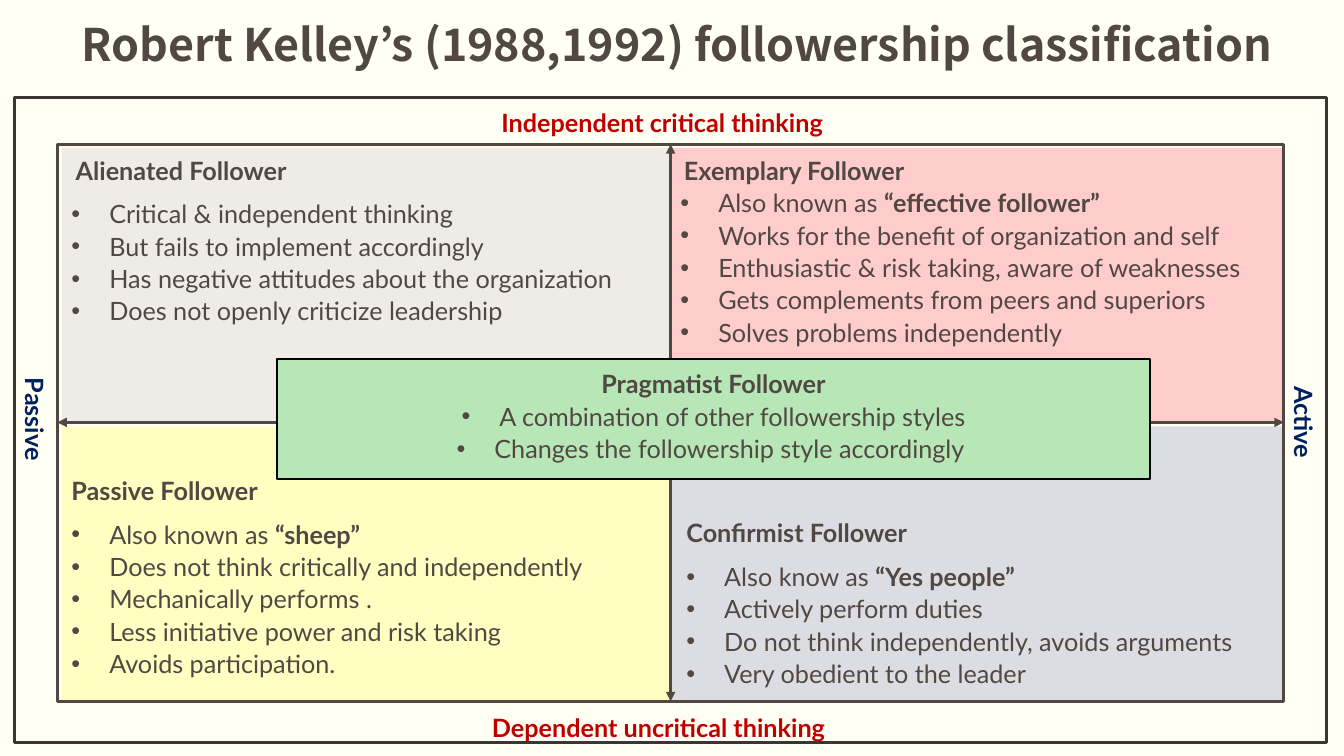
from pptx import Presentation
from pptx.dml.color import RGBColor
from pptx.enum.shapes import MSO_CONNECTOR, MSO_SHAPE
from pptx.enum.text import MSO_ANCHOR, PP_ALIGN
from pptx.oxml.ns import qn
from pptx.util import Pt
from lxml.etree import SubElement

# Content
TITLE = "Robert Kelley’s (1988,1992) followership classification"
TOP, BOTTOM = "Independent critical thinking", "Dependent uncritical thinking"
SIDES = [("Passive", 26, 299.5), ("Active", 932.4, 301.7)]  # word, centre
QUADS = [  # heading, points, fill, column, row, text top, format
    ("Alienated Follower", [
        "Critical & independent thinking",
        "But fails to implement accordingly",
        "Has negative attitudes about the organization",
        "Does not openly criticize leadership",
    ], "stone", 0, 0, 105.7, {"shift": 3}),
    ("Exemplary Follower", [
        "Also known as “effective follower”",
        "Works for the benefit of organization and self",
        "Enthusiastic & risk taking, aware of weaknesses",
        "Gets complements from peers and superiors",
        "Solves problems independently",
    ], "pink", 1, 0, 105.9, {"shift": 2.5, "gap": 0}),
    ("Passive Follower", [
        "Also known as “sheep”",
        "Does not think critically and independently",
        "Mechanically performs .",
        "Less initiative power and risk taking",
        "Avoids participation.",
    ], "yellow", 0, 1, 334.4, {}),
    ("Confirmist Follower", [
        "Also know as “Yes people”",
        "Actively perform duties",
        "Do not think independently, avoids arguments",
        "Very obedient to the leader",
    ], "grey", 1, 1, 364.7, {"left": 11.3}),
]
CENTRE = ("Pragmatist Follower", [
    "A combination of other followership styles",
    "Changes the followership style accordingly ",
])
HEX = {"page": "FFFFF3", "frame": "3C3532", "ink": "514843", "red": "C00000",
       "navy": "002060", "stone": "EFEBE5", "pink": "FFCCCC", "yellow": "FFFFC1",
       "grey": "DBDDE3", "green": "B7E7B7", "black": "000000"}

# Layout in points
FRAME = (10.3, 69.7, 937.2, 460.8)
FIELD = (41, 103, 876, 398)
MID_X, MID_Y = 479, 301.7
COLS = [(44, 435), (MID_X, 438)]  # left, width
ROWS = [(105.7, 195.5), (304.5, 195.5)]  # top, height

deck = Presentation()
deck.slide_width, deck.slide_height = Pt(960), Pt(540)
slide = deck.slides.add_slide(deck.slide_layouts[6])


def tint(name):
    return RGBColor.from_string(HEX[name])


slide.background.fill.solid()
slide.background.fill.fore_color.rgb = tint("page")


def box(area, fill=None, line=None, width=2.25):
    shape = slide.shapes.add_shape(MSO_SHAPE.RECTANGLE, *map(Pt, area))
    shape.shadow.inherit = False
    if fill:
        shape.fill.solid()
        shape.fill.fore_color.rgb = tint(fill)
    else:
        shape.fill.background()
    if line:
        shape.line.color.rgb = tint(line)
        shape.line.width = Pt(width)
    else:
        shape.line.fill.background()
    return shape


def write(shape, head, points=(), color="ink", size=18, font="Lato", align=PP_ALIGN.LEFT,
          space=1.07, gap=8, shift=0, left=7.2, top=3.6, wrap=True,
          anchor=MSO_ANCHOR.TOP):
    frame = shape.text_frame
    frame.word_wrap, frame.vertical_anchor = wrap, anchor
    frame.margin_left, frame.margin_right = Pt(left), Pt(7.2)
    frame.margin_top, frame.margin_bottom = Pt(top), Pt(min(top, 3.6))
    for i, text in enumerate([head, *points]):
        para = frame.paragraphs[0] if i == 0 else frame.add_paragraph()
        para.alignment = align
        para.line_spacing = 1.07 if i else space
        para.space_after = Pt(0 if i else gap)
        props = para._p.get_or_add_pPr()
        if i:
            props.set("marL", str(Pt(27)))
            props.set("indent", str(-Pt(27)))
            SubElement(props, qn("a:buFont")).set("typeface", "Arial")
            SubElement(props, qn("a:buChar")).set("char", "•")
        elif shift:
            props.set("marL", str(Pt(shift)))
        # Headings and quoted names are bold
        plain, mark, name = text.partition("“")
        for part, bold in ((plain, i == 0), (mark + name, True)):
            if part:
                run = para.add_run()
                run.text = part
                run.font.name, run.font.size = font, Pt(size)
                run.font.bold = bold
                run.font.color.rgb = tint(color)


def label(area, text, **form):
    shape = slide.shapes.add_textbox(*map(Pt, area))
    write(shape, text, **form)
    return shape


def arrow(x1, y1, x2, y2):
    line = slide.shapes.add_connector(MSO_CONNECTOR.STRAIGHT, *map(Pt, (x1, y1, x2, y2)))
    line.line.color.rgb = tint("ink")
    line.line.width = Pt(2.25)
    for end in ("a:headEnd", "a:tailEnd"):
        SubElement(line.line._get_or_add_ln(), qn(end)).set("type", "triangle")
    SubElement(line._element.spPr, qn("a:effectLst"))


# Outer frame and axis labels
box(FRAME, line="frame")
label((351, 71.3, 250, 30.4), TOP, color="red", wrap=False)
label((344.3, 503.7, 263, 26.8), BOTTOM, color="red", wrap=False)
for word, x, y in SIDES:
    side = label((x - 50, y - 15, 100, 30), word, color="navy", align=PP_ALIGN.CENTER, gap=0)
    side.rotation = 90

# Four quadrants
for head, points, fill, col, row, top, form in QUADS:
    (x, w), (y, h) = COLS[col], ROWS[row]
    write(box((x, y, w, h), fill), head, points, top=top - y + 3.6, **form)

# Field outline and axes
x, y, w, h = FIELD
box(FIELD, line="ink")
arrow(MID_X, y, MID_X, y + h)
arrow(x, MID_Y, x + w, MID_Y)

# Central style and title
write(box((198, 256.5, 623.3, 85.5), "green", "black", 1.5), *CENTRE,
      align=PP_ALIGN.CENTER, space=1.15, gap=0)
label((20, 12, 927.5, 47), TITLE, size=32, font="Noto Sans CJK KR", align=PP_ALIGN.CENTER,
      space=1.0, gap=0, top=0)

deck.save("out.pptx")
